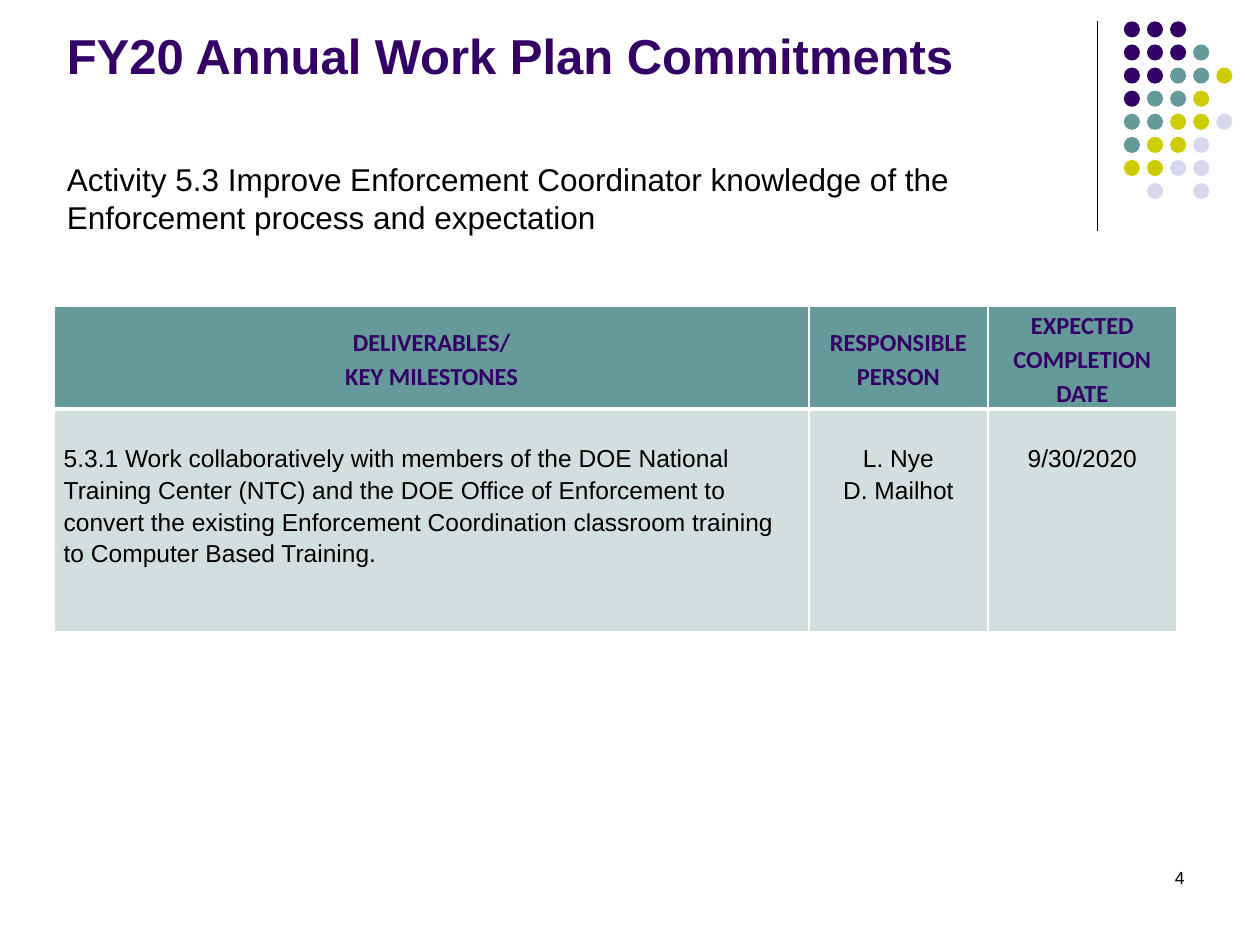
"""Build the FY20 work plan slide with its activity, milestone table and dot pattern."""
from dataclasses import dataclass

from lxml.etree import SubElement
from pptx import Presentation
from pptx.dml.color import RGBColor
from pptx.enum.shapes import MSO_CONNECTOR as Connector, MSO_SHAPE as Preset
from pptx.enum.text import MSO_ANCHOR as Anchor, MSO_AUTO_SIZE as AutoSize, PP_ALIGN as Align
from pptx.oxml.ns import qn
from pptx.util import Pt

PURPLE, TEAL, LIME, LILAC = "330066", "669999", "CCCC00", "D8D8EC"
BLACK, WHITE, PALE_TEAL = "000000", "FFFFFF", "D3DEDE"
DOT_COLORS = {"P": PURPLE, "T": TEAL, "L": LIME, "V": LILAC}
DOT_ROWS = ["PPP", "PPPT", "PPTTL", "PTTL", "TTLLV", "TLLV", "LLVV", " V V"]
DOT_PITCH = 13.2


@dataclass
class Box:
    left: float
    top: float
    width: float
    height: float

    def lengths(self) -> tuple:
        return Pt(self.left), Pt(self.top), Pt(self.width), Pt(self.height)


@dataclass
class TextStyle:
    size: float
    color: str = BLACK
    name: str = "Arial"
    bold: bool = False
    align: Align = Align.LEFT
    line_spacing: float = 1.0


@dataclass
class Column:
    width: float
    heading: str
    entry: str
    align: Align = Align.CENTER


COLUMNS = [
    Column(431.3, "DELIVERABLES/\nKEY MILESTONES",
           "5.3.1 Work collaboratively with members of the DOE National Training Center (NTC) "
           "and the DOE Office of Enforcement to convert the existing Enforcement Coordination "
           "classroom training to Computer Based Training.", Align.LEFT),
    Column(102.2, "RESPONSIBLE PERSON", "L. Nye\nD. Mailhot"),
    Column(108, "EXPECTED COMPLETION DATE", "9/30/2020"),
]


def rgb(color: str) -> RGBColor:
    return RGBColor.from_string(color)


def write_text(frame, text: str, style: TextStyle) -> None:
    frame.text = text
    frame.word_wrap = True
    for paragraph in frame.paragraphs:
        paragraph.alignment = style.align
        paragraph.line_spacing = style.line_spacing
        paragraph.space_before = Pt(0)
        font = paragraph.font
        font.name, font.size, font.bold = style.name, Pt(style.size), style.bold
        font.color.rgb = rgb(style.color)


def place_text(shape, box: Box, text: str, style: TextStyle, anchor: Anchor = Anchor.TOP) -> None:
    shape.left, shape.top, shape.width, shape.height = box.lengths()
    frame = shape.text_frame
    write_text(frame, text, style)
    frame.auto_size = AutoSize.NONE
    frame.vertical_anchor = anchor


def remove_bullet(paragraph) -> None:
    properties = paragraph._p.get_or_add_pPr()
    properties.set("marL", "0")
    properties.set("indent", "0")
    properties.insert_element_before(
        properties.makeelement(qn("a:buNone")), "a:tabLst", "a:defRPr", "a:extLst")


def add_divider(slide) -> None:
    divider = slide.shapes.add_connector(Connector.STRAIGHT, Pt(627), Pt(12), Pt(627), Pt(132))
    divider.line.color.rgb = rgb(BLACK)
    divider.line.width = Pt(0.75)
    SubElement(divider._element.spPr, qn("a:effectLst"))


def add_dots(slide) -> None:
    group = slide.shapes.add_group_shape()
    for row, codes in enumerate(DOT_ROWS):
        for column, code in enumerate(codes):
            if code == " ":
                continue
            box = Box(642.2 + column * DOT_PITCH, 12.2 + row * DOT_PITCH, 9.2, 9.2)
            dot = group.shapes.add_shape(Preset.OVAL, *box.lengths())
            dot.shadow.inherit = False
            dot.fill.solid()
            dot.fill.fore_color.rgb = rgb(DOT_COLORS[code])
            dot.line.fill.background()


def add_border(cell, side: str, width: float) -> None:
    line = SubElement(cell._tc.get_or_add_tcPr(), qn(f"a:ln{side}"), w=str(Pt(width)))
    fill = SubElement(line, qn("a:solidFill"))
    SubElement(fill, qn("a:srgbClr"), val=WHITE)


def format_cell(cell, text: str, style: TextStyle, fill: str, borders: dict,
                top_margin: float, anchor: Anchor) -> None:
    write_text(cell.text_frame, text, style)
    cell.margin_left = cell.margin_right = Pt(5.4)
    cell.margin_top, cell.margin_bottom = Pt(top_margin), Pt(0)
    cell.vertical_anchor = anchor
    for side, width in borders.items():
        add_border(cell, side, width)
    cell.fill.solid()
    cell.fill.fore_color.rgb = rgb(fill)


def add_milestones(slide) -> None:
    box = Box(31, 175, sum(column.width for column in COLUMNS), 185)
    table = slide.shapes.add_table(2, len(COLUMNS), *box.lengths()).table
    table.rows[0].height, table.rows[1].height = Pt(57.6), Pt(127.4)
    heading_style = TextStyle(14, PURPLE, "Calibri", True, Align.CENTER, 1.15)
    for index, column in enumerate(COLUMNS):
        table.columns[index].width = Pt(column.width)
        format_cell(table.cell(0, index), column.heading, heading_style, TEAL,
                    {"L": 1, "R": 1, "T": 1, "B": 3}, 0, Anchor.MIDDLE)
        entry_style = TextStyle(14, align=column.align, line_spacing=1.15)
        format_cell(table.cell(1, index), column.entry, entry_style, PALE_TEAL,
                    {"L": 1, "R": 1, "T": 3, "B": 1}, 18.5, Anchor.TOP)


def main() -> None:
    presentation = Presentation()
    presentation.slide_width, presentation.slide_height = Pt(720), Pt(540)
    slide = presentation.slides.add_slide(presentation.slide_layouts[1])
    add_divider(slide)
    add_dots(slide)
    place_text(slide.shapes.title, Box(31, 9.4, 594, 42.5), "FY20 Annual Work Plan Commitments",
               TextStyle(28, PURPLE, bold=True), Anchor.BOTTOM)
    activity = slide.placeholders[1]
    place_text(activity, Box(31, 87.8, 600, 51),
               "Activity 5.3 Improve Enforcement Coordinator knowledge of the "
               "Enforcement process and expectation", TextStyle(18))
    remove_bullet(activity.text_frame.paragraphs[0])
    add_milestones(slide)
    number_box = Box(516.2, 491.8, 167.8, 36)
    place_text(slide.shapes.add_textbox(*number_box.lengths()), number_box, "4",
               TextStyle(10, align=Align.RIGHT))
    presentation.save("out.pptx")


if __name__ == "__main__":
    main()
